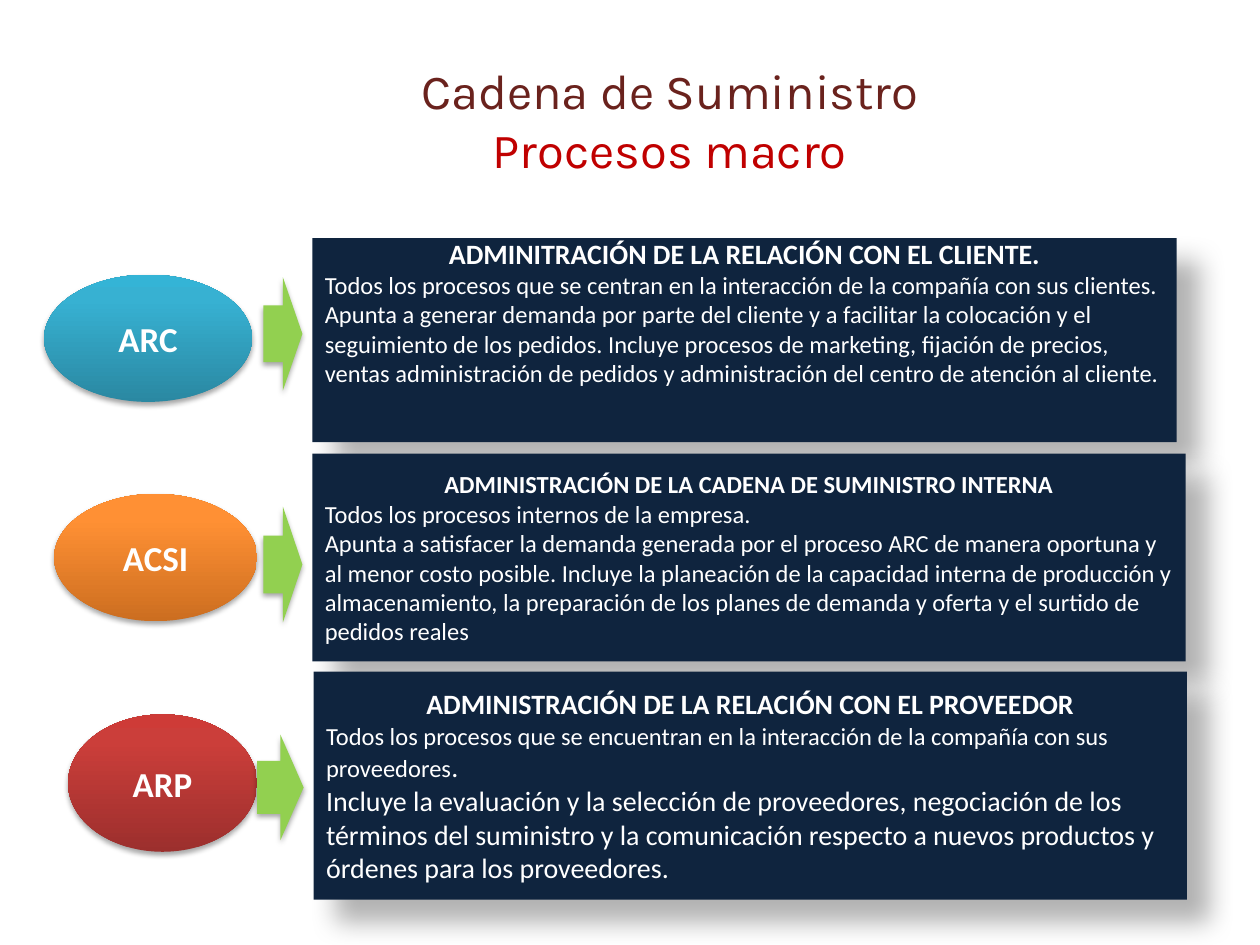
from copy import deepcopy

from lxml import etree
from pptx import Presentation
from pptx.dml.color import RGBColor
from pptx.enum.shapes import MSO_SHAPE
from pptx.enum.text import MSO_ANCHOR, PP_ALIGN
from pptx.oxml.ns import qn
from pptx.util import Inches, Pt

OVAL = MSO_SHAPE.OVAL
RECTANGLE = MSO_SHAPE.RECTANGLE
RIGHT_ARROW = MSO_SHAPE.RIGHT_ARROW
MIDDLE = MSO_ANCHOR.MIDDLE
CENTER = PP_ALIGN.CENTER
LEFT = PP_ALIGN.LEFT

WHITE, NAVY, GREEN = "FFFFFF", "0F243E", "92D050"
STOP_POSITIONS = (0, 80, 100)
SOFT_SHADOW = {"alpha": 35, "blur": 3.1, "distance": 1.8, "angle": 90}
DEEP_SHADOW = {"alpha": 30, "blur": 15, "distance": 18, "angle": 45}

PROCESSES = [
    {
        "label": "ARC",
        "gradient": ("2A88A2", "37B1D2", "34B4D6"),
        "oval": (0.35, 2.18, 1.65, 1.01),
        "panel": (2.48, 1.89, 6.86, 1.62),
        "arrow": (2.09, 2.2, 0.31, 0.9),
        "insets": {"margin_top": 0, "margin_bottom": Inches(0.45)},
        "paragraphs": [
            [("ADMINITRACIÓN DE LA RELACIÓN CON EL CLIENTE.", 16)],
            [("Todos los procesos que se centran en la interacción de la compañía con sus clientes.", 14)],
            [("Apunta a generar demanda por parte del cliente y a facilitar la colocación y el "
              "seguimiento de los pedidos. Incluye procesos de marketing, fijación de precios, "
              "ventas administración de pedidos y administración del centro de atención al cliente.", 14)],
        ],
    },
    {
        "label": "ACSI",
        "gradient": ("CC6E20", "FF9034", "FF9136"),
        "oval": (0.43, 3.92, 1.61, 1.01),
        "panel": (2.48, 3.6, 6.93, 1.65),
        "arrow": (2.09, 4.02, 0.31, 0.92),
        "insets": {},
        "paragraphs": [
            [("ADMINISTRACIÓN DE LA CADENA DE SUMINISTRO INTERNA", 14)],
            [("Todos los procesos internos de la empresa.", 14)],
            [("Apunta a satisfacer la demanda generada por el proceso ARC de manera oportuna y "
              "al menor costo posible. Incluye la planeación de la capacidad interna de producción y "
              "almacenamiento, la preparación de los planes de demanda y oferta y el surtido de "
              "pedidos reales", 14)],
        ],
    },
    {
        "label": "ARP",
        "gradient": ("9C2F2D", "CB3E3A", "CE3B37"),
        "oval": (0.54, 5.67, 1.5, 1.09),
        "panel": (2.49, 5.33, 6.93, 1.81),
        "arrow": (2.04, 5.83, 0.37, 0.84),
        "insets": {},
        "paragraphs": [
            [("ADMINISTRACIÓN DE LA RELACIÓN CON EL PROVEEDOR", 16)],
            [("Todos los procesos que se encuentran en la interacción de la compañía con sus proveedores", 14),
             (".", 16)],
            [("Incluye la evaluación y la selección de proveedores, negociación de los "
              "términos del suministro y la comunicación respecto a nuevos productos y "
              "órdenes para los proveedores.", 16)],
        ],
    },
]


def color(value):
    return RGBColor.from_string(value)


def set_attributes(target, values):
    for name, value in values.items():
        setattr(target, name, value)


def add_run(paragraph, text, size, font_color, name="Calibri", bold=False):
    run = paragraph.add_run()
    run.text = text
    set_attributes(run.font, {"size": Pt(size), "name": name, "bold": bold})
    run.font.color.rgb = color(font_color)


def add_shadow(shape, alpha, blur, distance, angle):
    shape.shadow.inherit = False
    effects = shape._element.spPr.find(qn("a:effectLst"))
    shadow = etree.SubElement(effects, qn("a:outerShdw"), {
        "blurRad": str(Pt(blur)), "dist": str(Pt(distance)),
        "dir": str(angle * 60000), "algn": "tl", "rotWithShape": "0"})
    shade = etree.SubElement(shadow, qn("a:srgbClr"), val="000000")
    etree.SubElement(shade, qn("a:alpha"), val=str(alpha * 1000))


def fill_gradient(shape, colors):
    fill = shape.fill
    fill.gradient()
    fill.gradient_angle = 90
    stop_list = shape._element.spPr.find(qn("a:gradFill")).find(qn("a:gsLst"))
    stop_list.append(deepcopy(stop_list[-1]))
    for stop, position, value in zip(fill.gradient_stops, STOP_POSITIONS, colors):
        stop.position = position / 100
        stop.color.rgb = color(value)


def add_block(slide, kind, box, shadow, fill_color=None):
    shape = slide.shapes.add_shape(kind, *map(Inches, box))
    if fill_color:
        shape.fill.solid()
        shape.fill.fore_color.rgb = color(fill_color)
    shape.line.fill.background()
    add_shadow(shape, **shadow)
    set_attributes(shape.text_frame, {"word_wrap": True, "vertical_anchor": MIDDLE})
    return shape


def add_oval(slide, box, label, gradient):
    shape = add_block(slide, OVAL, box, SOFT_SHADOW)
    fill_gradient(shape, gradient)
    paragraph = shape.text_frame.paragraphs[0]
    paragraph.alignment = CENTER
    add_run(paragraph, label, 20, WHITE, bold=True)


def add_panel(slide, box, paragraphs, insets):
    frame = add_block(slide, RECTANGLE, box, DEEP_SHADOW, NAVY).text_frame
    set_attributes(frame, insets)
    for index, runs in enumerate(paragraphs):
        heading = index == 0
        paragraph = frame.paragraphs[0] if heading else frame.add_paragraph()
        paragraph.alignment = CENTER if heading else LEFT
        for text, size in runs:
            add_run(paragraph, text, size, WHITE, bold=heading)


def set_title(slide):
    title = slide.shapes.title
    set_attributes(title, {"left": Inches(1.49), "top": Inches(0.32),
                           "width": Inches(7.65), "height": Inches(1.25)})
    set_attributes(title.text_frame, {"word_wrap": True, "vertical_anchor": MIDDLE})
    paragraph = title.text_frame.paragraphs[0]
    paragraph.alignment = CENTER
    add_run(paragraph, "Cadena de Suministro", 28, "6A221D", "Karla")
    paragraph.add_line_break()
    add_run(paragraph, "Procesos macro", 28, "C00000", "Karla")


def main():
    presentation = Presentation()
    set_attributes(presentation, {"slide_width": Inches(10), "slide_height": Inches(7.5)})
    slide = presentation.slides.add_slide(presentation.slide_layouts[5])
    set_title(slide)
    for process in PROCESSES:
        add_oval(slide, process["oval"], process["label"], process["gradient"])
        add_panel(slide, process["panel"], process["paragraphs"], process["insets"])
        add_block(slide, RIGHT_ARROW, process["arrow"], SOFT_SHADOW, GREEN)
    presentation.save("out.pptx")


if __name__ == "__main__":
    main()
